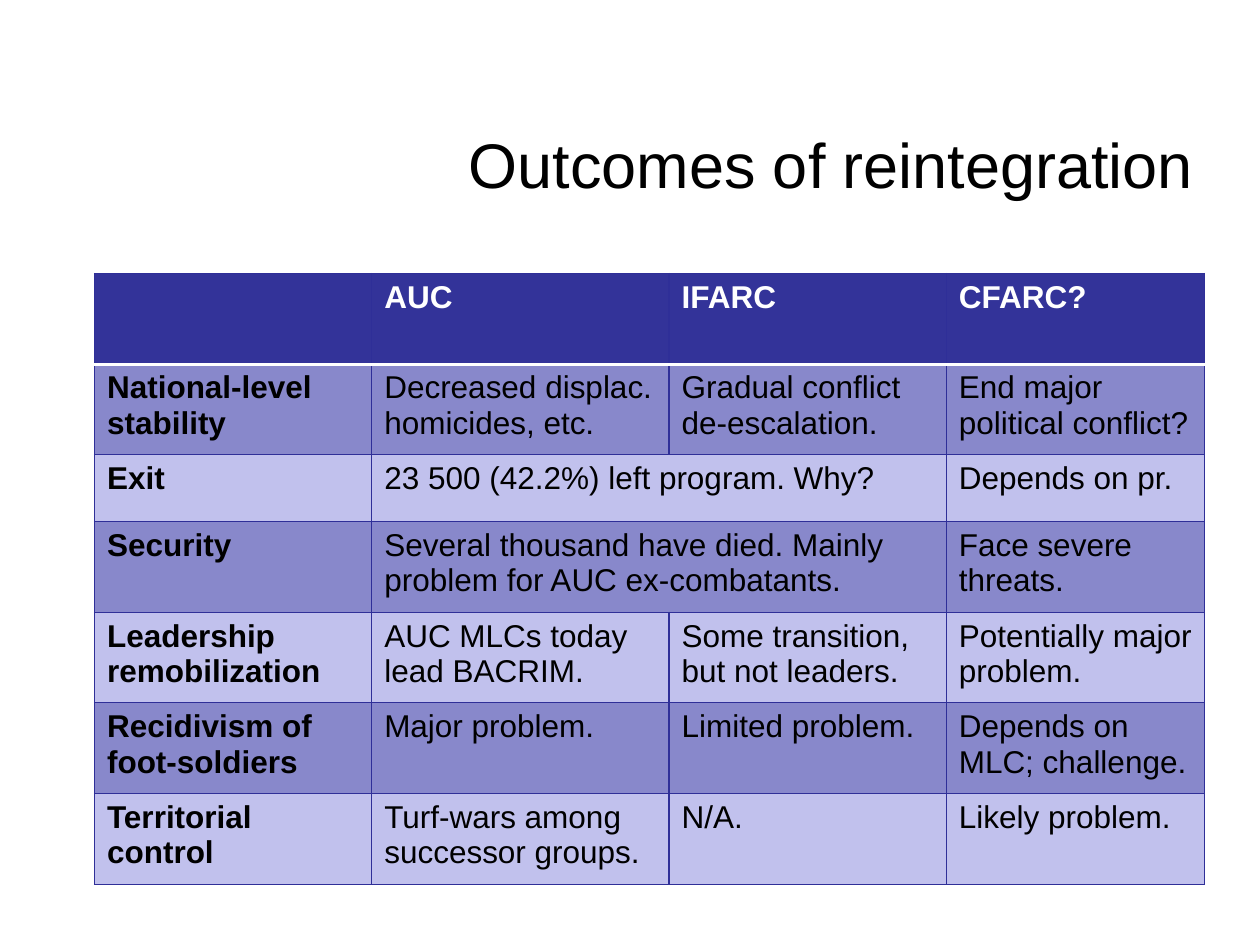
from lxml import etree
from pptx import Presentation
from pptx.dml.color import RGBColor
from pptx.enum import text
from pptx.oxml import ns
from pptx.util import Inches, Pt

TITLE = "Outcomes of reintegration"
# None marks a cell merged with the one to its left.
ROWS = [
    ("", "AUC", "IFARC", "CFARC?"),
    ("National-level stability", "Decreased displac. homicides, etc.",
     "Gradual conflict de-escalation.", "End major political conflict?"),
    ("Exit", "23 500 (42.2%) left program. Why?", None, "Depends on pr."),
    ("Security", "Several thousand have died. Mainly problem for AUC ex-combatants.",
     None, "Face severe threats."),
    ("Leadership remobilization", "AUC MLCs today lead BACRIM.",
     "Some transition, but not leaders.", "Potentially major problem."),
    ("Recidivism of foot-soldiers", "Major problem.", "Limited problem.",
     "Depends on MLC; challenge."),
    ("Territorial control", "Turf-wars among successor groups.", "N/A.",
     "Likely problem."),
]
COLUMN_WIDTHS = (2.2, 2.36, 2.2, 2.05)
ROW_HEIGHT, EXIT_HEIGHT = 0.72, 0.53
EXIT_ROW = 2

FONT = "Arial"
BLACK = RGBColor(0x00, 0x00, 0x00)
WHITE = RGBColor(0xFF, 0xFF, 0xFF)
HEADER = RGBColor(0x33, 0x33, 0x99)
DARK_BAND = RGBColor(0x88, 0x88, 0xCB)
LIGHT_BAND = RGBColor(0xC1, 0xC1, 0xED)
GRID = RGBColor(0x2F, 0x2F, 0x98)


def format_runs(paragraph, size, color, bold=False):
    for run in paragraph.runs:
        run.font.name = FONT
        run.font.size = Pt(size)
        run.font.bold = bold
        run.font.color.rgb = color


def add_border(cell, side, color, width):
    properties = cell._tc.get_or_add_tcPr()
    line = etree.SubElement(properties, ns.qn(f"a:ln{side}"), w=str(Pt(width)))
    fill = etree.SubElement(line, ns.qn("a:solidFill"))
    etree.SubElement(fill, ns.qn("a:srgbClr"), val=str(color))


def style_cell(cell, row, column):
    header_edge = {0: "B", 1: "T"}.get(row)
    for side in "LRTB":
        if side == header_edge:
            add_border(cell, side, WHITE, 2)
        else:
            add_border(cell, side, GRID, 0.75)
    cell.fill.solid()
    band = DARK_BAND if row % 2 else LIGHT_BAND
    cell.fill.fore_color.rgb = HEADER if row == 0 else band
    format_runs(cell.text_frame.paragraphs[0], 18,
                WHITE if row == 0 else BLACK, bold=row == 0 or column == 0)


def add_title(slide):
    box = slide.shapes.add_textbox(Inches(1.93), Inches(0.67), Inches(7.64), Inches(1.25))
    frame = box.text_frame
    frame.word_wrap = True
    frame.vertical_anchor = text.MSO_ANCHOR.MIDDLE
    frame.text = TITLE
    paragraph = frame.paragraphs[0]
    paragraph.alignment = text.PP_ALIGN.RIGHT
    format_runs(paragraph, 36, BLACK)


def add_outcomes_table(slide):
    heights = [EXIT_HEIGHT if row == EXIT_ROW else ROW_HEIGHT for row in range(len(ROWS))]
    table = slide.shapes.add_table(
        len(ROWS), len(COLUMN_WIDTHS), Inches(0.75), Inches(2.17),
        Inches(sum(COLUMN_WIDTHS)), Inches(sum(heights))).table
    table.horz_banding = False
    for column, width in zip(table.columns, COLUMN_WIDTHS):
        column.width = Inches(width)
    for table_row, height in zip(table.rows, heights):
        table_row.height = Inches(height)
    for row, entries in enumerate(ROWS):
        for column, entry in enumerate(entries):
            cell = table.cell(row, column)
            if entry is None:
                table.cell(row, column - 1).merge(cell)
            elif entry:
                cell.text_frame.text = entry
            style_cell(cell, row, column)


def main():
    presentation = Presentation()
    presentation.slide_width = Inches(10)
    presentation.slide_height = Inches(7.5)
    slide = presentation.slides.add_slide(presentation.slide_layouts[6])
    add_title(slide)
    add_outcomes_table(slide)
    presentation.save("out.pptx")


if __name__ == "__main__":
    main()
